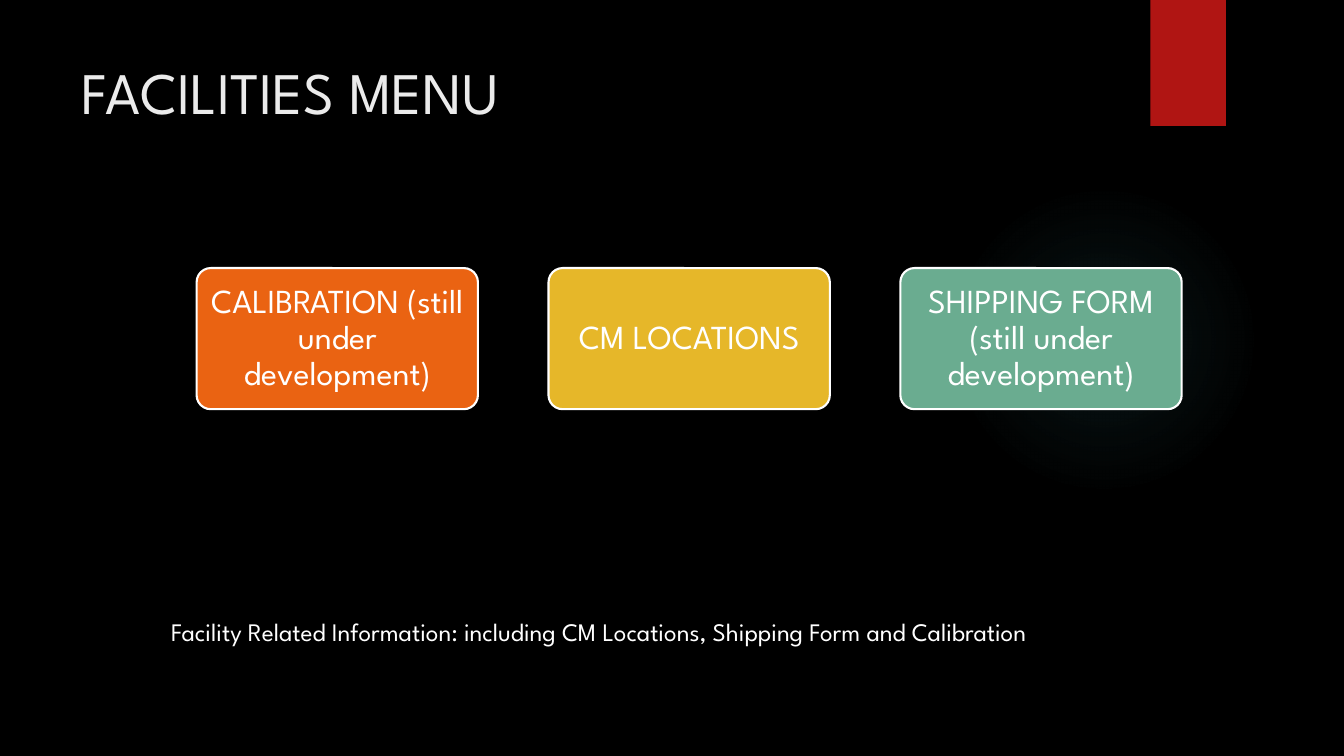
from lxml import etree
from pptx import Presentation
from pptx.dml.color import RGBColor
from pptx.enum.shapes import MSO_SHAPE as Shape
from pptx.enum.text import MSO_ANCHOR as Anchor, PP_ALIGN as Align
from pptx.oxml import parse_xml
from pptx.oxml.ns import nsdecls, qn
from pptx.util import Inches, Pt

FONT = "League Spartan"
MENU = [
    ("CALIBRATION (still under development)", "EA6312"),
    ("CM LOCATIONS", "E6B729"),
    ("SHIPPING FORM (still under development)", "6AAC90"),
]
CARD_WIDTH = 2.79
CARD_PITCH = 3.49


def color(hex_text):
    return RGBColor.from_string(hex_text)


def paint(fill, hex_text):
    fill.solid()
    fill.fore_color.rgb = color(hex_text)


def write(text_frame, text, size, hex_text):
    text_frame.word_wrap = True
    text_frame.text = text
    paragraph = text_frame.paragraphs[0]
    font = paragraph.runs[0].font
    font.name, font.size = FONT, Pt(size)
    font.color.rgb = color(hex_text)
    return paragraph


def add_plain_shape(slide, kind, left, top, width, height):
    shape = slide.shapes.add_shape(
        kind, Inches(left), Inches(top), Inches(width), Inches(height))
    shape.shadow.inherit = False
    shape.line.fill.background()
    return shape


def add_glow(slide, left, top, size):
    glow = add_plain_shape(slide, Shape.OVAL, left, top, size, size)
    gradient = parse_xml(f'<a:gradFill {nsdecls("a")} rotWithShape="1"/>')
    stops = etree.SubElement(gradient, qn("a:gsLst"))
    for position, opacity in ((0, 7), (36, 6), (69, 0)):
        stop = etree.SubElement(stops, qn("a:gs"), pos=str(position * 1000))
        tint = etree.SubElement(stop, qn("a:srgbClr"), val="50B9C1")
        etree.SubElement(tint, qn("a:alpha"), val=str(opacity * 1000))
    circle = etree.SubElement(gradient, qn("a:path"), attrib={"path": "circle"})
    etree.SubElement(circle, qn("a:fillToRect"),
                     l="50000", t="50000", r="50000", b="50000")
    glow.element.spPr.find(qn("a:prstGeom")).addnext(gradient)


def add_ribbon(slide, left, top, width, height):
    ribbon = add_plain_shape(slide, Shape.RECTANGLE, left, top, width, height)
    paint(ribbon.fill, "B01513")


def add_text(slide, text, size, hex_text, left, top, width, height):
    box = slide.shapes.add_textbox(
        Inches(left), Inches(top), Inches(width), Inches(height))
    write(box.text_frame, text, size, hex_text)


def add_card(slide, label, fill, left, top, width, height):
    card = add_plain_shape(
        slide, Shape.ROUNDED_RECTANGLE, left, top, width, height)
    card.adjustments[0] = 0.1
    paint(card.fill, fill)
    paint(card.line.fill, "FFFFFF")
    card.line.width = Pt(1.5)
    frame = card.text_frame
    frame.margin_left = frame.margin_right = Inches(0.09)
    frame.margin_top = frame.margin_bottom = Inches(0.07)
    frame.vertical_anchor = Anchor.MIDDLE
    paragraph = write(frame, label, 24, "FFFFFF")
    paragraph.alignment = Align.CENTER
    paragraph.line_spacing = 0.9


def add_menu(slide, left, top, height):
    for index, (label, fill) in enumerate(MENU):
        add_card(slide, label, fill,
                 left + index * CARD_PITCH, top, CARD_WIDTH, height)


def main():
    presentation = Presentation()
    presentation.slide_width = Inches(13.33)
    presentation.slide_height = Inches(7.5)
    slide = presentation.slides.add_slide(presentation.slide_layouts[6])
    paint(slide.background.fill, "000000")
    add_glow(slide, 9.41, 1.83, 3.08)
    add_ribbon(slide, 11.41, 0, 0.75, 1.25)
    add_text(slide, "FACILITIES MENU", 42, "EBEBEB", 0.71, 0.5, 10.29, 1.53)
    add_menu(slide, 1.95, 2.66, 1.4)
    add_text(slide, "Facility Related Information: including CM Locations, "
             "Shipping Form and Calibration", 18, "FFFFFF",
             1.6, 6.07, 10.4, 0.4)
    presentation.save("out.pptx")


if __name__ == "__main__":
    main()
